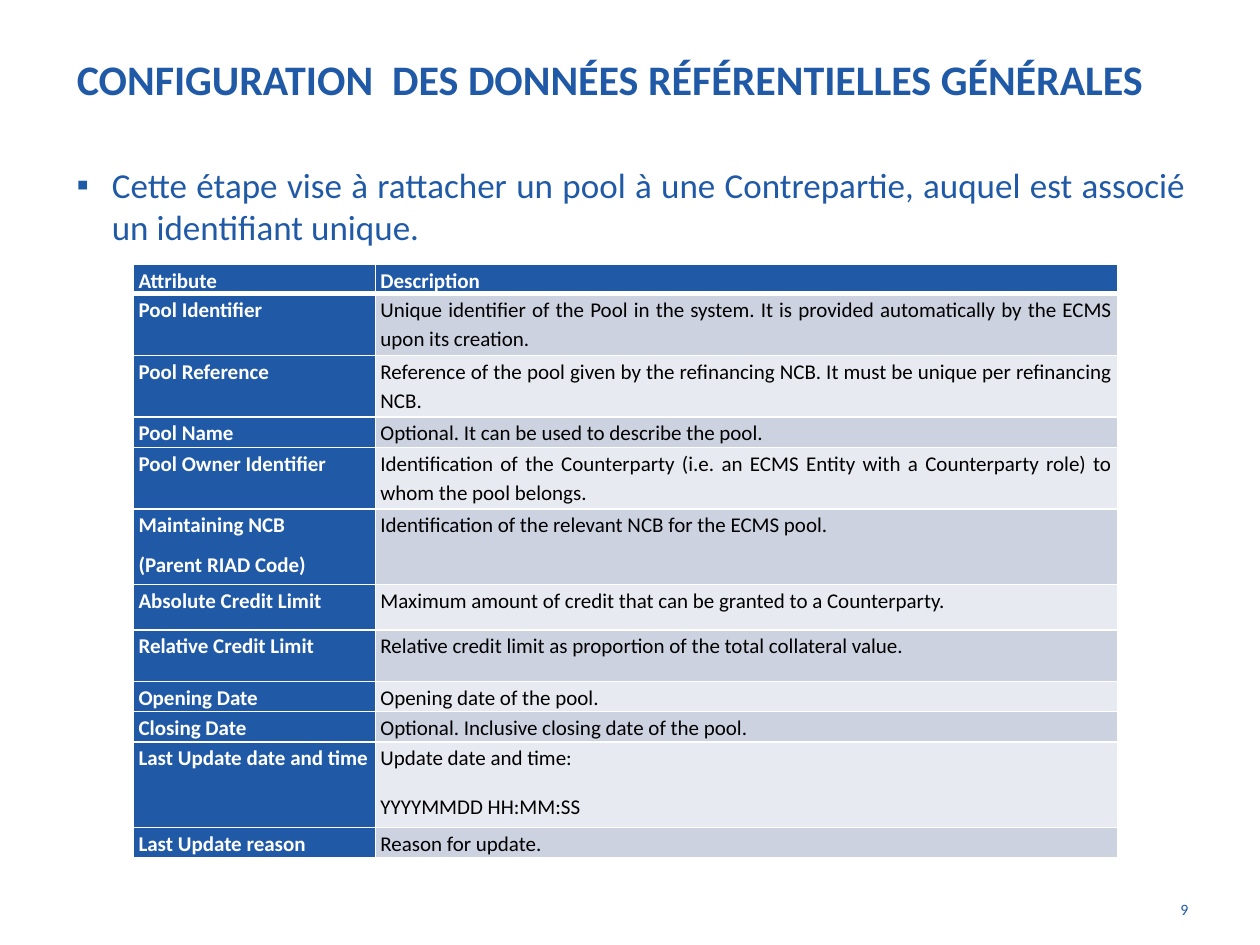
from lxml.etree import SubElement
from pptx import Presentation
from pptx.dml.color import RGBColor
from pptx.enum.text import MSO_ANCHOR as Anchor, PP_ALIGN as Align
from pptx.oxml.ns import qn
from pptx.util import Inches, Pt

BLUE = RGBColor(0x20, 0x5A, 0xA7)
WHITE = RGBColor(0xFF, 0xFF, 0xFF)
BLACK = RGBColor(0, 0, 0)
BANDS = (RGBColor(0xE8, 0xEA, 0xF1), RGBColor(0xCD, 0xD2, 0xE1))
FONT = "Calibri"

TITLE = "CONFIGURATION  DES DONNÉES RÉFÉRENTIELLES GÉNÉRALES"
INTRO = ("Cette étape vise à rattacher un pool à une Contrepartie, "
         "auquel est associé un identifiant unique.")
PAGE_NUMBER = "9"
COLUMN_WIDTHS = (1.92, 5.89)
ROWS = [
    (0.23, "Attribute", "Description"),
    (0.49, "Pool Identifier", "Unique identifier of the Pool in the system. "
     "It is provided automatically by the ECMS upon its creation."),
    (0.49, "Pool Reference", "Reference of the pool given by the refinancing NCB. "
     "It must be unique per refinancing NCB."),
    (0.24, "Pool Name", "Optional. It can be used to describe the pool."),
    (0.49, "Pool Owner Identifier", "Identification of the Counterparty (i.e. an ECMS "
     "Entity with a Counterparty role) to whom the pool belongs."),
    (0.6, "Maintaining NCB\n(Parent RIAD Code)",
     "Identification of the relevant NCB for the ECMS pool."),
    (0.36, "Absolute Credit Limit",
     "Maximum amount of credit that can be granted to a Counterparty."),
    (0.41, "Relative Credit Limit",
     "Relative credit limit as proportion of the total collateral value."),
    (0.24, "Opening Date", "Opening date of the pool."),
    (0.24, "Closing Date", "Optional. Inclusive closing date of the pool."),
    (0.68, "Last Update date and time", "Update date and time:\nYYYYMMDD HH:MM:SS"),
    (0.24, "Last Update reason", "Reason for update."),
]


def format_paragraph(paragraph, size, color, bold=False, alignment=Align.LEFT):
    paragraph.alignment = alignment
    for run in paragraph.runs:
        run.font.name = FONT
        run.font.size = Pt(size)
        run.font.bold = bold
        run.font.color.rgb = color


def add_text(slide, box, text, size, alignment):
    shape = slide.shapes.add_textbox(*map(Inches, box))
    shape.text_frame.word_wrap = True
    shape.text_frame.text = text
    paragraph = shape.text_frame.paragraphs[0]
    format_paragraph(paragraph, size, BLUE, alignment=alignment)
    return paragraph


def add_bullet(paragraph, character, indent):
    properties = paragraph._p.get_or_add_pPr()
    properties.set("marL", str(Inches(indent)))
    properties.set("indent", str(-Inches(indent)))
    SubElement(properties, qn("a:buFont"), typeface="Arial")
    SubElement(properties, qn("a:buChar"), char=character)


def set_borders(cell, widths):
    properties = cell._tc.get_or_add_tcPr()
    for side, width in widths.items():
        line = SubElement(properties, qn(f"a:ln{side}"), w=str(Pt(width)))
        fill = SubElement(line, qn("a:solidFill"))
        SubElement(fill, qn("a:srgbClr"), val=str(WHITE))


def fill_cell(cell, text, row, column):
    header, label = row == 0, column == 0
    strong = header or label
    set_borders(cell, {"L": 1, "R": 1, "T": 3 if row == 1 else 1, "B": 3 if header else 1})
    cell.fill.solid()
    cell.fill.fore_color.rgb = BLUE if strong else BANDS[row % 2]
    cell.margin_left = cell.margin_right = Inches(0.04)
    cell.margin_top = cell.margin_bottom = 0
    cell.text_frame.text = text
    for index, paragraph in enumerate(cell.text_frame.paragraphs):
        format_paragraph(paragraph, 12, WHITE if strong else BLACK, strong,
                         Align.LEFT if header else Align.JUSTIFY)
        paragraph.line_spacing = 1.15
        if index:
            paragraph.space_before = Pt(6 if label else 11)


def add_attribute_table(slide):
    height = sum(row[0] for row in ROWS)
    frame = slide.shapes.add_table(len(ROWS), len(COLUMN_WIDTHS), Inches(1.06), Inches(2.1),
                                   Inches(sum(COLUMN_WIDTHS)), Inches(height))
    table = frame.table
    for column, width in zip(table.columns, COLUMN_WIDTHS):
        column.width = Inches(width)
    for row, (row_height, *texts) in enumerate(ROWS):
        table.rows[row].height = Inches(row_height)
        for column, text in enumerate(texts):
            fill_cell(table.cell(row, column), text, row, column)


def main():
    presentation = Presentation()
    presentation.slide_width, presentation.slide_height = Inches(10), Inches(7.5)
    slide = presentation.slides.add_slide(presentation.slide_layouts[5])

    title = slide.shapes.title
    title.left, title.top, title.width, title.height = map(Inches, (0.51, 0, 9, 1.25))
    title.text_frame.text = TITLE
    title.text_frame.vertical_anchor = Anchor.MIDDLE
    format_paragraph(title.text_frame.paragraphs[0], 24, BLUE, bold=True)

    intro = add_text(slide, (0.51, 1.25, 9, 5.27), INTRO, 20, Align.JUSTIFY)
    add_bullet(intro, "▪", 0.28)
    add_text(slide, (8.94, 7.09, 0.59, 0.39), PAGE_NUMBER, 9, Align.RIGHT)
    add_attribute_table(slide)
    presentation.save("out.pptx")


if __name__ == "__main__":
    main()
